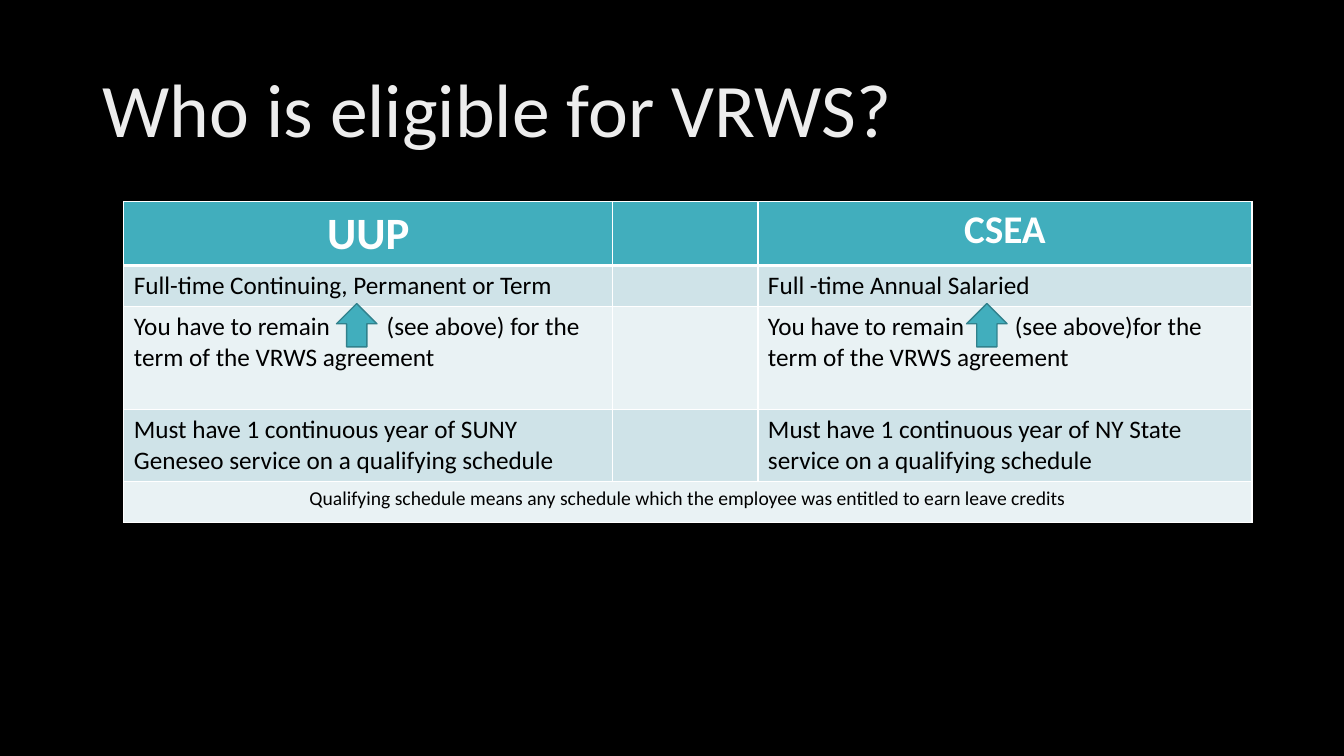
from lxml import etree
from pptx import Presentation
from pptx import util as u
from pptx.dml.color import RGBColor
from pptx.enum import shapes, text
from pptx.oxml.ns import qn

BLACK = RGBColor(0x00, 0x00, 0x00)
WHITE = RGBColor(0xFF, 0xFF, 0xFF)
TITLE_GREY = RGBColor(0xED, 0xED, 0xED)
TEAL = RGBColor(0x41, 0xAE, 0xBD)
DARK_TEAL = RGBColor(0x30, 0x81, 0x8C)
BAND_DARK = RGBColor(0xCF, 0xE3, 0xE8)
BAND_LIGHT = RGBColor(0xE9, 0xF2, 0xF4)
FONT = "Calibri"


def style_font(font, size, color, bold=False):
    font.name = FONT
    font.size = u.Pt(size)
    font.bold = bold
    font.color.rgb = color


def add_borders(cell, bottom_width):
    properties = cell._tc.get_or_add_tcPr()
    widths = {"a:lnL": 1, "a:lnR": 1, "a:lnT": 1, "a:lnB": bottom_width}
    for index, (tag, width) in enumerate(widths.items()):
        line = etree.Element(qn(tag), w=str(u.Pt(width)))
        fill = etree.SubElement(line, qn("a:solidFill"))
        etree.SubElement(fill, qn("a:srgbClr"), val=str(WHITE))
        properties.insert(index, line)


presentation = Presentation()
presentation.slide_width = u.Cm(33.87)
presentation.slide_height = u.Cm(19.05)
slide = presentation.slides.add_slide(presentation.slide_layouts[6])
slide.background.fill.solid()
slide.background.fill.fore_color.rgb = BLACK

title = slide.shapes.add_textbox(u.Cm(2.33), u.Cm(1.01), u.Cm(29.21), u.Cm(3.68))
title.text_frame.word_wrap = True
title.text_frame.vertical_anchor = text.MSO_ANCHOR.MIDDLE
title.text_frame.text = "Who is eligible for VRWS?"
paragraph = title.text_frame.paragraphs[0]
paragraph.line_spacing = 0.9
style_font(paragraph.runs[0].font, 54, TITLE_GREY)

rows = [
    ("UUP", "", "CSEA"),
    ("Full-time Continuing, Permanent or Term", "", "Full -time Annual Salaried"),
    ("You have to remain\t(see above) for the term of the VRWS agreement", "",
     "You have to remain\t(see above)for the term of the VRWS agreement"),
    ("Must have 1 continuous year of SUNY Geneseo service on a qualifying schedule", "",
     "Must have 1 continuous year of NY State service on a qualifying schedule"),
    ("Qualifying schedule means any schedule which the employee was entitled to earn leave credits",
     "", ""),
]
column_widths = [12.32, 3.66, 12.45]
row_heights = [1.61, 1.04, 2.59, 1.81, 1.03]
header_sizes = [32, 18, 28]
tab_stops = [6.37, 0, 6.22]
last_row = len(rows) - 1

table = slide.shapes.add_table(
    len(rows), len(column_widths), u.Cm(3.12), u.Cm(5.08),
    u.Cm(sum(column_widths)), u.Cm(sum(row_heights))).table
for column, width in zip(table.columns, column_widths):
    column.width = u.Cm(width)
for row, height in zip(table.rows, row_heights):
    row.height = u.Cm(height)
table.cell(last_row, 0).merge(table.cell(last_row, 2))

for row_index, row in enumerate(rows):
    header = row_index == 0
    footer = row_index == last_row
    band = TEAL if header else BAND_DARK if row_index % 2 else BAND_LIGHT
    for column_index, wording in enumerate(row):
        cell = table.cell(row_index, column_index)
        cell.fill.solid()
        cell.fill.fore_color.rgb = band
        add_borders(cell, 3 if header else 1)
        cell.text_frame.text = wording
        paragraph = cell.text_frame.paragraphs[0]
        if header or footer:
            paragraph.alignment = text.PP_ALIGN.CENTER
        if "\t" in wording:
            tabs = etree.SubElement(paragraph._p.get_or_add_pPr(), qn("a:tabLst"))
            etree.SubElement(tabs, qn("a:tab"), pos=str(u.Cm(tab_stops[column_index])), algn="l")
        size = header_sizes[column_index] if header else 14 if footer else 18
        for run in paragraph.runs:
            style_font(run.font, size, WHITE if header else BLACK, header)

for arrow_left in (8.48, 24.36):
    arrow = slide.shapes.add_shape(
        shapes.MSO_SHAPE.UP_ARROW, u.Cm(arrow_left), u.Cm(7.65), u.Cm(1.02), u.Cm(1.09))
    arrow.shadow.inherit = False
    arrow.fill.solid()
    arrow.fill.fore_color.rgb = TEAL
    arrow.line.color.rgb = DARK_TEAL
    arrow.line.width = u.Pt(1)

presentation.save("out.pptx")
